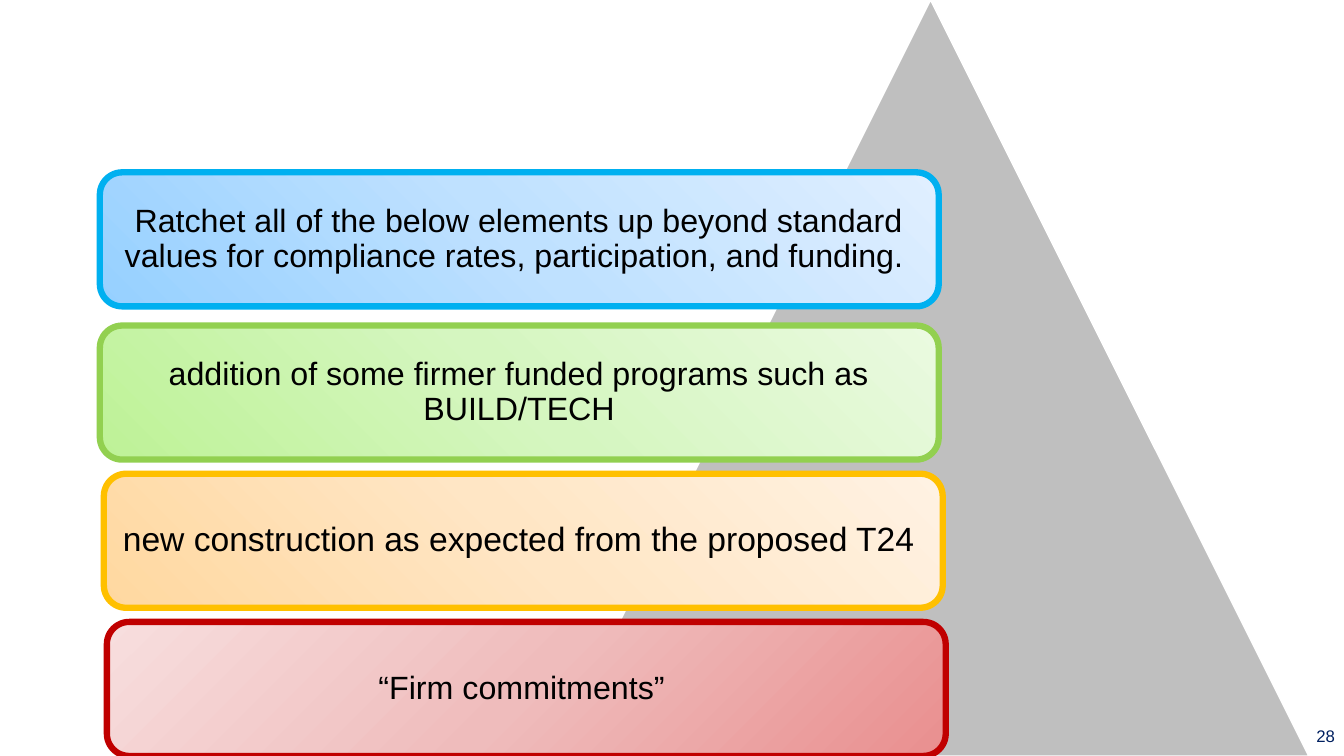
from typing import NamedTuple

from lxml import etree
from pptx import Presentation
from pptx.dml.color import RGBColor
from pptx.enum.shapes import MSO_SHAPE
from pptx.enum.text import MSO_ANCHOR, PP_ALIGN
from pptx.oxml.ns import qn
from pptx.util import Inches, Pt

TRIANGLE = MSO_SHAPE.ISOSCELES_TRIANGLE
ROUNDED = MSO_SHAPE.ROUNDED_RECTANGLE
MIDDLE = MSO_ANCHOR.MIDDLE
CENTER, RIGHT = PP_ALIGN.CENTER, PP_ALIGN.RIGHT

FONT = "Arial"
COLORS = {
    "white": "FFFFFF",
    "black": "000000",
    "navy": "002060",
    "gray": "BFBFBF",
    "red": "C00000",
    "amber": "FFC000",
    "green": "92D050",
    "blue": "00B0F0",
}
BOX_WIDTH, BOX_HEIGHT = 8.32, 1.33


class Layer(NamedTuple):
    text: str
    left: float
    top: float
    line: str
    gradient: tuple[str, str, str]
    size: int = 23
    focus: str = "left"


LAYERS = [
    Layer("“Firm commitments” ", 1.06, 6.17, "red",
          ("E98F8F", "EFBCBC", "F7DEDE"), focus="right"),
    Layer("new construction as expected from the proposed T24 ", 1.03, 4.7, "amber",
          ("FFD8A0", "FFE6C5", "FFF2E3"), size=24),
    Layer("addition of some firmer funded programs such as BUILD/TECH", 0.99, 3.23, "green",
          ("BEF297", "D5F6C0", "EAFAE0")),
    Layer("Ratchet all of the below elements up beyond standard values for "
          "compliance rates, participation, and funding. ", 0.99, 1.71, "blue",
          ("96D0FF", "BFE1FF", "E0EFFF")),
]


def rgb(name: str) -> RGBColor:
    return RGBColor.from_string(COLORS[name])


def write_text(sp, text: str, *, size: int, color: str = "black",
               align=CENTER, spacing: float = 1.0, margin: float = 0.1) -> None:
    tf = sp.text_frame
    tf.word_wrap = True
    tf.vertical_anchor = MIDDLE
    tf.margin_left = tf.margin_right = Inches(0.1)
    tf.margin_top = tf.margin_bottom = Inches(margin)
    p = tf.paragraphs[0]
    p.alignment = align
    p.line_spacing = spacing
    r = p.add_run()
    r.text = text
    r.font.name = FONT
    r.font.size = Pt(size)
    r.font.color.rgb = rgb(color)


def add_outlined(s, kind, box: tuple[float, float, float, float], line: str, width: float):
    sp = s.shapes.add_shape(kind, *map(Inches, box))
    sp.shadow.inherit = False
    sp.line.color.rgb = rgb(line)
    sp.line.width = Pt(width)
    return sp


def fill_radial(sp, stops: tuple[str, str, str], focus: str) -> None:
    """Spread three colours in circles from a bottom corner."""
    sp.fill.gradient()
    grad = sp.fill._xPr.find(qn("a:gradFill"))
    for child in list(grad):
        grad.remove(child)
    stop_list = etree.SubElement(grad, qn("a:gsLst"))
    for i, color in enumerate(stops):
        stop = etree.SubElement(stop_list, qn("a:gs"), pos=str(i * 50000))
        etree.SubElement(stop, qn("a:srgbClr"), val=color)
    circle = etree.SubElement(grad, qn("a:path"), {"path": "circle"})
    side = "r" if focus == "left" else "l"
    etree.SubElement(circle, qn("a:fillToRect"), {side: "100000", "t": "100000"})


def add_layer(s, layer: Layer) -> None:
    box = (layer.left, layer.top, BOX_WIDTH, BOX_HEIGHT)
    sp = add_outlined(s, ROUNDED, box, layer.line, 4.5)
    fill_radial(sp, layer.gradient, layer.focus)
    write_text(sp, layer.text, size=layer.size, spacing=0.9)


def main() -> None:
    prs = Presentation()
    prs.slide_width, prs.slide_height = Inches(13.33), Inches(7.5)
    s = prs.slides.add_slide(prs.slide_layouts[6])

    number = s.shapes.add_textbox(Inches(11.41), Inches(7.1), Inches(1.93), Inches(0.4))
    write_text(number, "28", size=12, color="navy", align=RIGHT, margin=0.05)

    pyramid = add_outlined(s, TRIANGLE, (5.48, 0, 7.5, 7.5), "white", 1)
    pyramid.fill.solid()
    pyramid.fill.fore_color.rgb = rgb("gray")

    for layer in LAYERS:
        add_layer(s, layer)
    prs.save("out.pptx")


if __name__ == "__main__":
    main()
